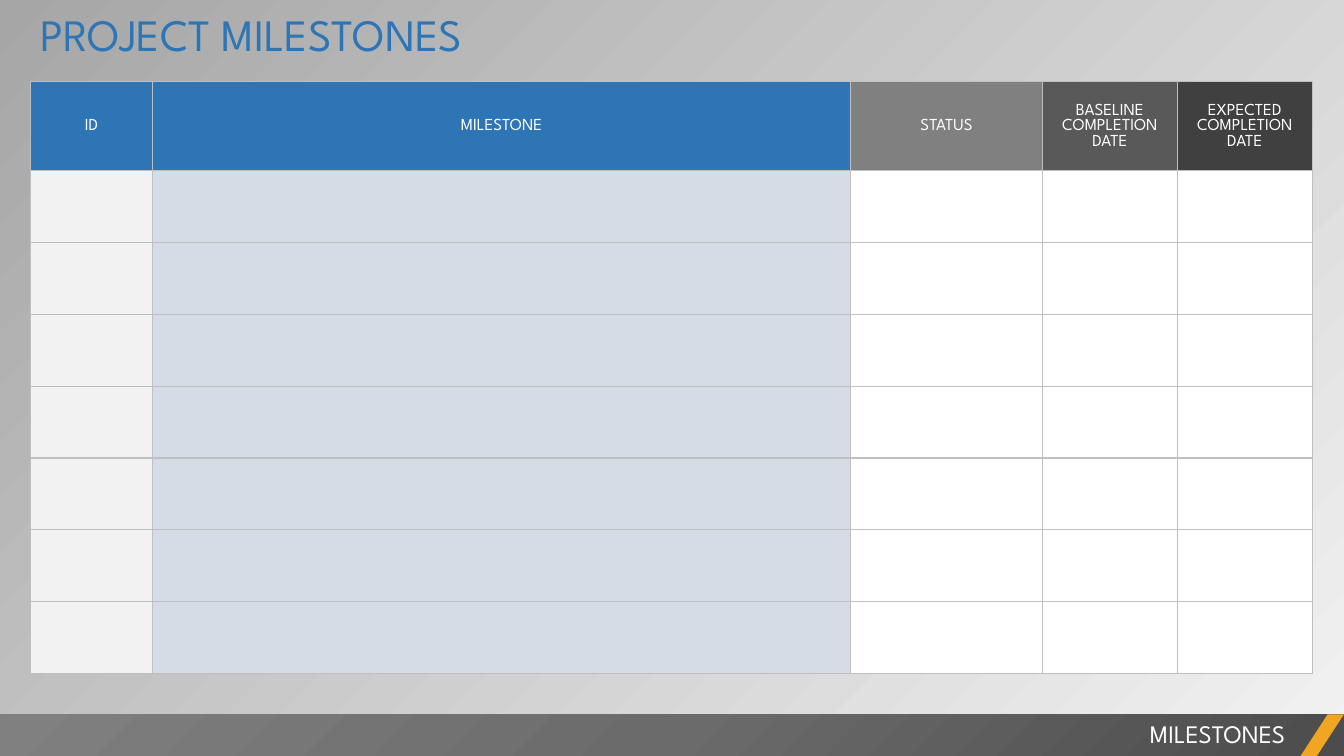
from lxml import etree
from pptx import Presentation
from pptx.dml.color import RGBColor
from pptx.enum.shapes import MSO_SHAPE
from pptx.enum.text import MSO_ANCHOR, PP_ALIGN
from pptx.oxml import parse_xml
from pptx.util import Cm, Pt

TOP, MIDDLE = MSO_ANCHOR.TOP, MSO_ANCHOR.MIDDLE
LEFT, CENTER, RIGHT = PP_ALIGN.LEFT, PP_ALIGN.CENTER, PP_ALIGN.RIGHT
RECTANGLE, PARALLELOGRAM = MSO_SHAPE.RECTANGLE, MSO_SHAPE.PARALLELOGRAM

FONT = "League Spartan"
BLUE = RGBColor(0x2E, 0x75, 0xB6)
PALE_BLUE = RGBColor(0xD6, 0xDC, 0xE5)
GRAY = RGBColor(0x80, 0x80, 0x80)
DARK_GRAY = RGBColor(0x59, 0x59, 0x59)
CHARCOAL = RGBColor(0x40, 0x40, 0x40)
LIGHT_GRAY = RGBColor(0xF2, 0xF2, 0xF2)
BORDER = RGBColor(0xBF, 0xBF, 0xBF)
ORANGE = RGBColor(0xF0, 0xA6, 0x22)
WHITE = RGBColor(0xFF, 0xFF, 0xFF)

TITLE = "PROJECT MILESTONES"
FOOTER = "MILESTONES"
# heading, width in cm, heading fill, body fill
COLUMNS = [
    ("ID", 3.07, BLUE, LIGHT_GRAY),
    ("MILESTONE", 17.6, BLUE, PALE_BLUE),
    ("STATUS", 4.83, GRAY, WHITE),
    ("BASELINE COMPLETION DATE", 3.4, DARK_GRAY, WHITE),
    ("EXPECTED COMPLETION DATE", 3.4, CHARCOAL, WHITE),
]
BODY_ROWS = 7
HEAD_HEIGHT, ROW_HEIGHT = 2.24, 1.81
# position %, colour, opacity %
BACKGROUND_STOPS = [(0, "F2F2F2", 40), (100, "A6A6A6", 100)]
BAR_STOPS = [(0, "4C4C4C", 100), (50, "6B6B6B", 100), (100, "808080", 100)]
BACKGROUND_DIRECTION = '<a:lin ang="13500000" scaled="0"/>'
BAR_DIRECTION = '<a:path path="circle"><a:fillToRect l="100000" t="100000"/></a:path>'

A = "http://schemas.openxmlformats.org/drawingml/2006/main"


def set_text(tf, text, size, color, align=LEFT):
    tf.word_wrap = True
    p = tf.paragraphs[0]
    p.alignment = align
    r = p.add_run()
    r.text = text
    r.font.name, r.font.size = FONT, Pt(size)
    r.font.color.rgb = color


def replace_with_gradient(solid_fill, stops, direction):
    stop_xml = "".join(
        f'<a:gs pos="{pos * 1000}"><a:srgbClr val="{color}">'
        f'<a:alpha val="{opacity * 1000}"/></a:srgbClr></a:gs>'
        for pos, color, opacity in stops)
    gradient = parse_xml(f'<a:gradFill xmlns:a="{A}" rotWithShape="1">'
                         f'<a:gsLst>{stop_xml}</a:gsLst>{direction}</a:gradFill>')
    solid_fill.getparent().replace(solid_fill, gradient)


def style_cell(cell, fill):
    """Fill the cell and give it a thin border on all four sides."""
    cell.fill.solid()
    cell.fill.fore_color.rgb = fill
    cell.vertical_anchor = MIDDLE
    cell.margin_left = cell.margin_right = cell.margin_top = Cm(0.03)
    cell.margin_bottom = 0
    tc_pr = cell._tc.get_or_add_tcPr()
    for i, side in enumerate(("lnL", "lnR", "lnT", "lnB")):
        line = etree.Element(f"{{{A}}}{side}", w=str(Pt(1)))
        solid = etree.SubElement(line, f"{{{A}}}solidFill")
        etree.SubElement(solid, f"{{{A}}}srgbClr", val=str(BORDER))
        tc_pr.insert(i, line)


def add_plain_shape(s, kind, left, top, width, height, color):
    sp = s.shapes.add_shape(kind, Cm(left), Cm(top), Cm(width), Cm(height))
    sp.shadow.inherit = False
    sp.fill.solid()
    sp.fill.fore_color.rgb = color
    sp.line.fill.background()
    return sp


def add_milestone_table(s):
    widths = [column[1] for column in COLUMNS]
    table = s.shapes.add_table(
        BODY_ROWS + 1, len(COLUMNS), Cm(0.77), Cm(2.06), Cm(sum(widths)),
        Cm(HEAD_HEIGHT + BODY_ROWS * ROW_HEIGHT)).table
    for i, row in enumerate(table.rows):
        row.height = Cm(ROW_HEIGHT if i else HEAD_HEIGHT)
    for j, (heading, width, head_fill, body_fill) in enumerate(COLUMNS):
        table.columns[j].width = Cm(width)
        for i in range(BODY_ROWS + 1):
            style_cell(table.cell(i, j), body_fill if i else head_fill)
        set_text(table.cell(0, j).text_frame, heading, 12, WHITE, CENTER)


def add_footer(s):
    bar = add_plain_shape(s, RECTANGLE, 0, 18, 33.87, 1.06, GRAY)
    replace_with_gradient(bar.element.xpath("p:spPr/a:solidFill")[0],
                          BAR_STOPS, BAR_DIRECTION)
    slash = add_plain_shape(s, PARALLELOGRAM, 32.77, 18, 1.1, 1.06, ORANGE)
    slash.adjustments[0] = 0.65
    label = s.shapes.add_textbox(Cm(13.34), Cm(17.98), Cm(19.3), Cm(1.02))
    set_text(label.text_frame, FOOTER, 18, WHITE, RIGHT)


def main():
    prs = Presentation()
    prs.slide_width, prs.slide_height = Cm(33.87), Cm(19.05)
    s = prs.slides.add_slide(prs.slide_layouts[5])
    s.background.fill.solid()
    s.background.fill.fore_color.rgb = LIGHT_GRAY
    replace_with_gradient(s.element.xpath(".//p:bgPr/a:solidFill")[0],
                          BACKGROUND_STOPS, BACKGROUND_DIRECTION)
    add_milestone_table(s)
    add_footer(s)
    title = s.shapes.title
    title.left, title.top, title.width, title.height = Cm(0.76), Cm(0.03), Cm(32.49), Cm(1.63)
    title.text_frame.vertical_anchor = TOP
    set_text(title.text_frame, TITLE, 32, BLUE)
    prs.save("out.pptx")


if __name__ == "__main__":
    main()
